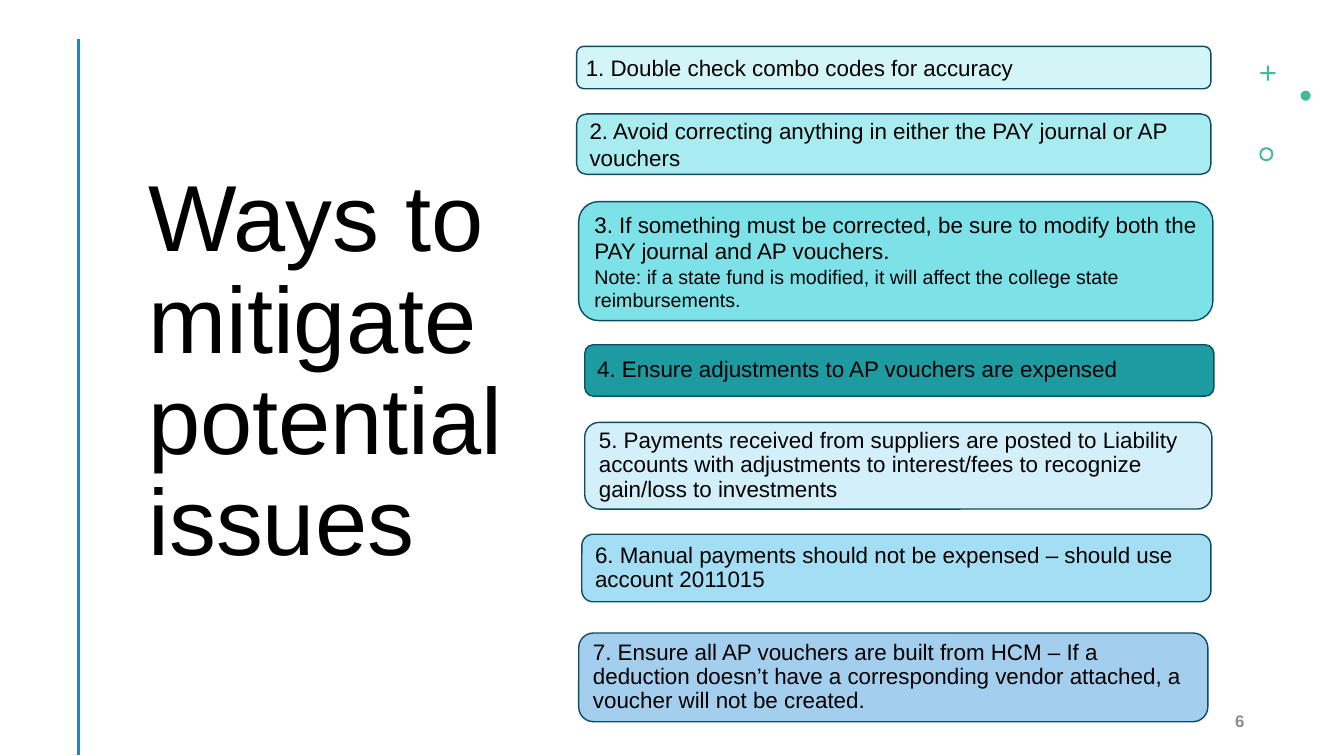
from dataclasses import dataclass

from lxml.etree import SubElement
from pptx import Presentation
from pptx.dml.color import RGBColor
from pptx.enum.shapes import MSO_CONNECTOR, MSO_SHAPE
from pptx.enum.text import MSO_ANCHOR, MSO_AUTO_SIZE, PP_ALIGN
from pptx.oxml.ns import qn
from pptx.util import Inches, Pt

WIDE, TALL = 13.33, 7.5


@dataclass(frozen=True)
class Theme:
    font: str = "Arial"
    ink: str = "000000"
    gray: str = "8C8C8C"
    edge: str = "0C4C64"
    rule: str = "2683BC"
    mark: str = "42BA97"
    title: int = 67
    body: int = 16
    note: int = 14
    page: int = 12


THEME = Theme()

TIPS = [
    (42.91, 6.13, 47.19, 5.6, "D4F5F7", 1,
     ["1. Double check combo codes for accuracy"]),
    (42.91, 15.07, 47.19, 8, "A8ECEF", 1,
     ["2. Avoid correcting anything in either the PAY journal or AP vouchers"]),
    (43.06, 26.67, 47.19, 15.73, "7DE2E7", 1,
     ["3. If something must be corrected, be sure to modify both the PAY journal and AP vouchers.",
      "Note: if a state fund is modified, it will affect the college state reimbursements."]),
    (43.51, 45.6, 46.81, 6.8, "1D9BA1", 0.9,
     ["4. Ensure adjustments to AP vouchers are expensed"]),
    (43.51, 55.87, 46.66, 11.47, "D2EFFA", 0.9,
     ["5. Payments received from suppliers are posted to Liability accounts with adjustments to "
      "interest/fees to recognize gain/loss to investments"]),
    (43.29, 70.67, 46.81, 8.93, "A4DEF4", 0.9,
     ["6. Manual payments should not be expensed – should use account 2011015"]),
    (43.06, 83.73, 46.81, 11.73, "A3CEED", 0.9,
     ["7. Ensure all AP vouchers are built from HCM – If a deduction doesn’t have a corresponding "
      "vendor attached, a voucher will not be created."]),
]

MARKS = [
    (MSO_SHAPE.CROSS, 93.77, 8.67, 0.15, 0.43),
    (MSO_SHAPE.OVAL, 96.77, 12, 0.1, None),
    (MSO_SHAPE.DONUT, 93.7, 19.47, 0.14, 0.14),
]


def across(share):
    return Inches(WIDE * share / 100)


def down(share):
    return Inches(TALL * share / 100)


def area(left, top, width, height):
    return across(left), down(top), across(width), down(height)


def tint(name):
    return RGBColor.from_string(name)


def write(para, text, size, color=THEME.ink, bold=False):
    run = para.add_run()
    run.text = text
    font = run.font
    font.name, font.size, font.bold = THEME.font, Pt(size), bold
    font.color.rgb = tint(color)
    return run


def settle(frame):
    frame.word_wrap = True
    frame.auto_size = MSO_AUTO_SIZE.NONE
    frame.vertical_anchor = MSO_ANCHOR.MIDDLE


def add_title(slide, text):
    title = slide.shapes.title
    title.left, title.top, title.width, title.height = area(10.28, 8.67, 32.33, 81.47)
    settle(title.text_frame)
    para = title.text_frame.paragraphs[0]
    para.alignment = PP_ALIGN.LEFT
    para.line_spacing = 0.9
    write(para, text, THEME.title)


def add_tip(slide, left, top, width, height, fill, pitch, lines):
    box = slide.shapes.add_shape(MSO_SHAPE.ROUNDED_RECTANGLE, *area(left, top, width, height))
    box.shadow.inherit = False
    box.fill.solid()
    box.fill.fore_color.rgb = tint(fill)
    box.line.color.rgb = tint(THEME.edge)
    box.line.width = Pt(1)
    frame = box.text_frame
    settle(frame)
    for index, text in enumerate(lines):
        para = frame.add_paragraph() if index else frame.paragraphs[0]
        para.alignment = PP_ALIGN.LEFT
        para.line_spacing = pitch
        write(para, text, THEME.note if index else THEME.body)
    return box


def add_mark(slide, kind, left, top, size, ratio):
    mark = slide.shapes.add_shape(kind, across(left), down(top), Inches(size), Inches(size))
    mark.shadow.inherit = False
    mark.fill.solid()
    mark.fill.fore_color.rgb = tint(THEME.mark)
    mark.line.fill.background()
    if ratio:
        mark.adjustments[0] = ratio


def add_rule(slide):
    x = across(5.85)
    rule = slide.shapes.add_connector(MSO_CONNECTOR.STRAIGHT, x, down(5.2), x, down(99.87))
    rule.line.color.rgb = tint(THEME.rule)
    rule.line.width = Pt(2)
    SubElement(rule.element.spPr, qn("a:effectLst"))


def add_page(slide, text):
    box = slide.shapes.add_textbox(*area(70.82, 92.67, 22.51, 5.33))
    settle(box.text_frame)
    para = box.text_frame.paragraphs[0]
    para.alignment = PP_ALIGN.RIGHT
    write(para, text, THEME.page, THEME.gray, True)


def main():
    deck = Presentation()
    deck.slide_width, deck.slide_height = Inches(WIDE), Inches(TALL)
    slide = deck.slides.add_slide(deck.slide_layouts.get_by_name("Title Only"))
    add_rule(slide)
    for mark in MARKS:
        add_mark(slide, *mark)
    boxes = [add_tip(slide, *tip) for tip in TIPS]
    boxes[0].text_frame.margin_left = Inches(0.07)
    boxes[0].text_frame.paragraphs[0].space_before = Pt(2)
    add_title(slide, "Ways to mitigate potential issues")
    add_page(slide, "6")
    deck.save("out.pptx")


if __name__ == "__main__":
    main()
